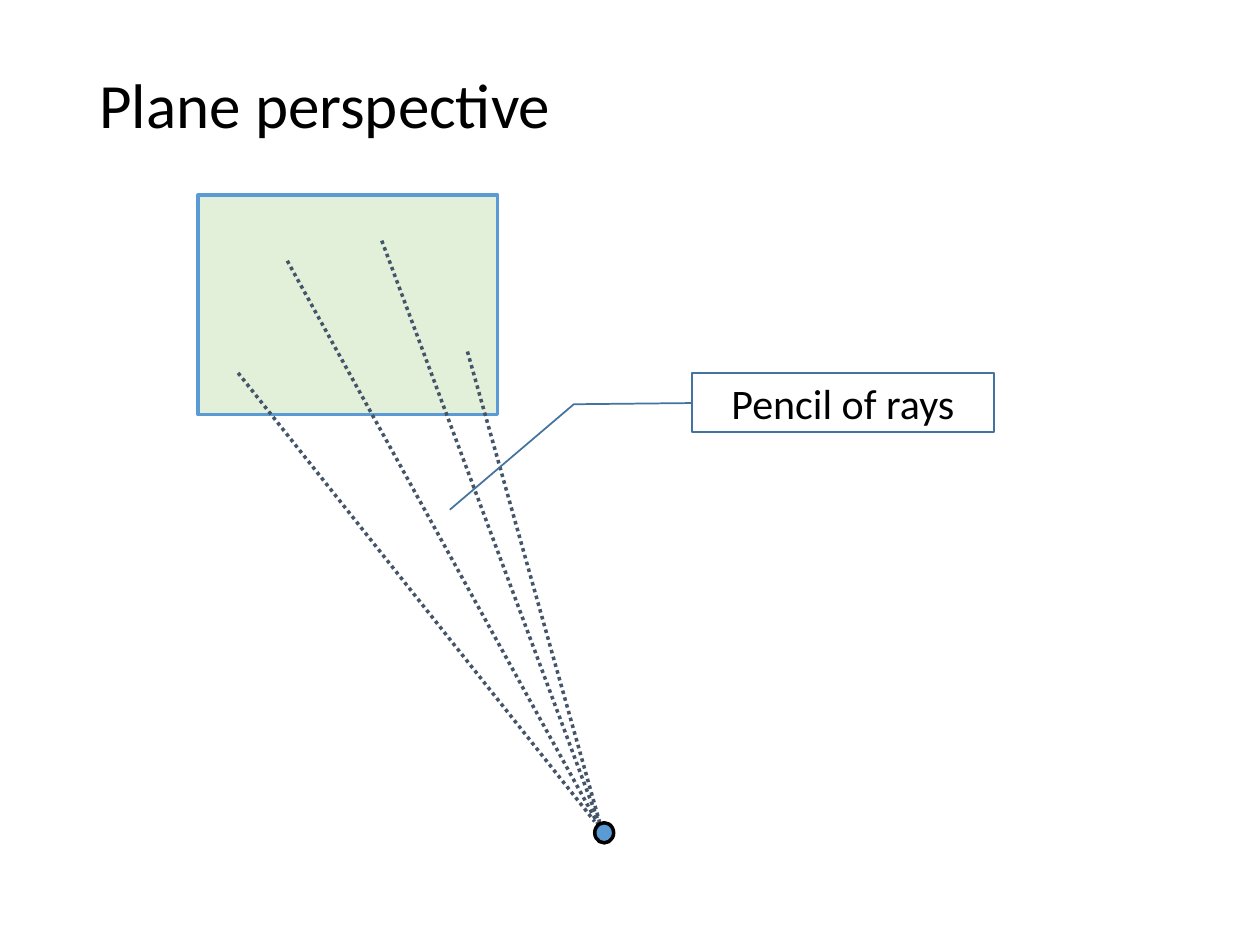
from pptx import Presentation
from pptx.dml.color import RGBColor as RGB
from pptx.enum.dml import MSO_LINE as Dash
from pptx.enum.shapes import MSO_CONNECTOR as Link, MSO_SHAPE as Form
from pptx.enum.text import MSO_ANCHOR as Anchor, PP_ALIGN as Align
from pptx.util import Inches, Pt
from lxml.etree import SubElement

HUES = {"ink": "000000", "blue": "5B9BD5", "navy": "43739E",
        "ray": "44546A", "plane": "E2F0D9"}
HUES = {name: RGB.from_string(code) for name, code in HUES.items()}
A = "{http://schemas.openxmlformats.org/drawingml/2006/main}"

deck = Presentation()
deck.slide_width, deck.slide_height = Inches(10), Inches(7.5)
slide = deck.slides.add_slide(deck.slide_layouts[6])
shapes = slide.shapes


def write(shape, text, size=24, align=Align.CENTER, space=1.0):
    frame = shape.text_frame
    frame.word_wrap = True
    frame.vertical_anchor = Anchor.MIDDLE
    para = frame.paragraphs[0]
    para.alignment, para.line_spacing = align, space
    run = para.add_run()
    run.text = text
    run.font.name, run.font.size = "Calibri", Pt(size)
    run.font.color.rgb = HUES["ink"]


def draw(form, box, line, width, fill=None):
    """Add a preset shape; box is left, top, width, height in inches."""
    shape = shapes.add_shape(form, *map(Inches, box))
    shape.shadow.inherit = False
    shape.line.color.rgb = HUES[line]
    shape.line.width = Pt(width)
    if fill:
        shape.fill.solid()
        shape.fill.fore_color.rgb = HUES[fill]
    else:
        shape.fill.background()
    return shape


title = shapes.add_textbox(*map(Inches, (0.69, 0.41, 8.62, 0.9)))
write(title, "Plane perspective", size=36, align=Align.LEFT, space=0.9)

draw(Form.RECTANGLE, (1.57, 1.55, 2.38, 1.74), "blue", 2, "plane")

# Rays run from points on the plane to the eye
eye = (4.78, 6.6)
rays = [((1.89, 2.96), (4.72, 6.52)), ((2.28, 2.07), eye),
        ((3.03, 1.91), eye), ((3.71, 2.79), eye)]
for start, end in rays:
    ray = shapes.add_connector(Link.STRAIGHT, *map(Inches, start + end))
    ray.line.color.rgb = HUES["ray"]
    ray.line.width = Pt(2)
    ray.line.dash_style = Dash.ROUND_DOT
    SubElement(ray.element.spPr, A + "effectLst")

draw(Form.OVAL, (4.72, 6.53, 0.15, 0.16), "ink", 2, "blue")

note = draw(Form.LINE_CALLOUT_2, (5.49, 2.96, 2.4, 0.47), "navy", 1)
for i, share in enumerate((0.51, 0, 0.53, -0.39, 2.31, -0.8)):
    note.adjustments[i] = share
write(note, "Pencil of rays")

deck.save("out.pptx")
